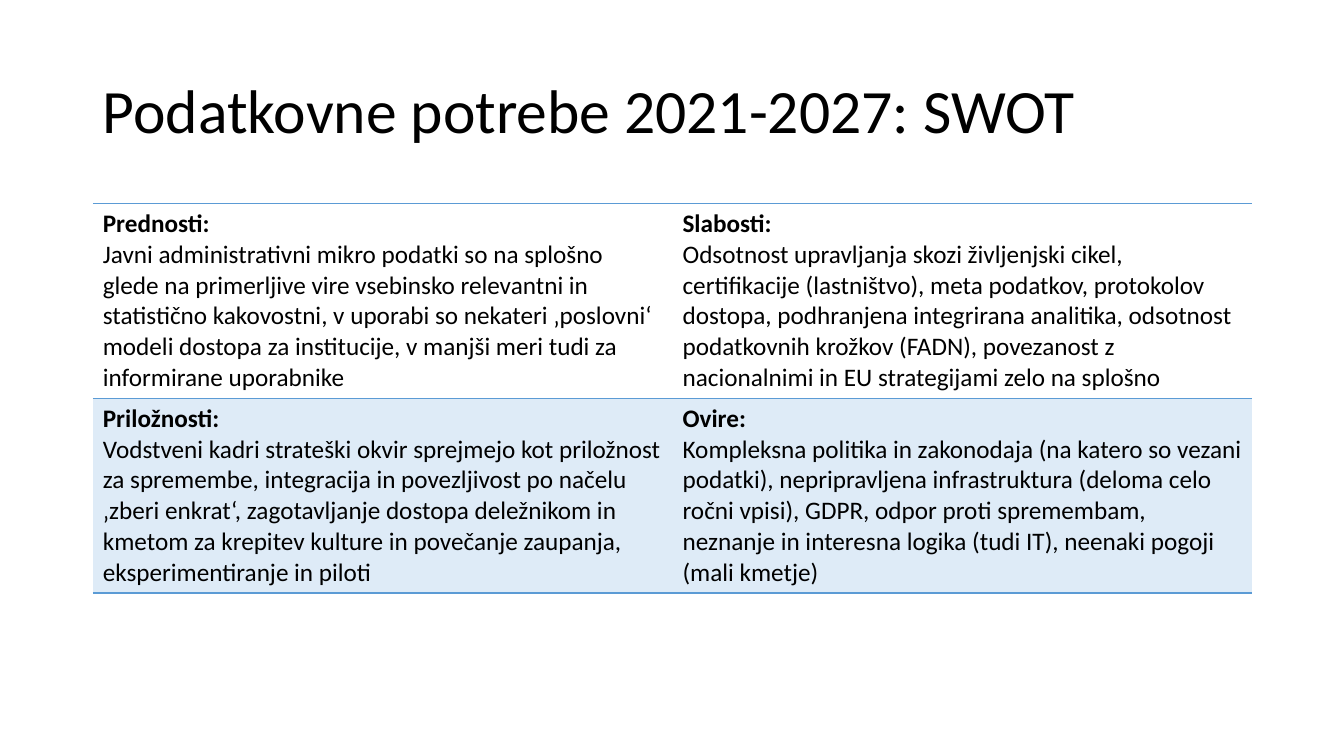
import pptx
import pptx.util
import pptx.dml.color
import pptx.enum.text
import pptx.oxml
import pptx.oxml.ns
from dataclasses import dataclass
from lxml import etree

Inches = pptx.util.Inches
Align = pptx.enum.text.PP_ALIGN
Anchor = pptx.enum.text.MSO_ANCHOR


@dataclass(frozen=True)
class Theme:
    font: str = "Calibri"
    ink: str = "000000"
    line: str = "5B9BD5"
    band: str = "DEEBF7"
    title: int = 44
    body: int = 18
    rule: int = 1


THEME = Theme()
PLAIN = "{2D5ABB26-0587-4C30-8999-92F81FD0307C}"  # table style without grid
LEFT, WIDTH = 0.92, 11.5
TITLE = "Podatkovne potrebe 2021-2027: SWOT"
SWOT = [
    [
        ("Prednosti:",
         "Javni administrativni mikro podatki so na splošno glede na primerljive "
         "vire vsebinsko relevantni in statistično kakovostni, v uporabi so nekateri "
         "‚poslovni‘ modeli dostopa za institucije, v manjši meri tudi za "
         "informirane uporabnike"),
        ("Slabosti:",
         "Odsotnost upravljanja skozi življenjski cikel, certifikacije (lastništvo), "
         "meta podatkov, protokolov dostopa, podhranjena integrirana analitika, "
         "odsotnost podatkovnih krožkov (FADN), povezanost z nacionalnimi in EU "
         "strategijami zelo na splošno"),
    ],
    [
        ("Priložnosti:",
         "Vodstveni kadri strateški okvir sprejmejo kot priložnost za spremembe, "
         "integracija in povezljivost po načelu ‚zberi enkrat‘, zagotavljanje "
         "dostopa deležnikom in kmetom za krepitev kulture in povečanje zaupanja, "
         "eksperimentiranje in piloti"),
        ("Ovire:",
         "Kompleksna politika in zakonodaja (na katero so vezani podatki), "
         "nepripravljena infrastruktura (deloma celo ročni vpisi), GDPR, odpor proti "
         "spremembam, neznanje in interesna logika (tudi IT), neenaki pogoji "
         "(mali kmetje)"),
    ],
]


def add_run(para, text, size, bold=False):
    run = para.add_run()
    run.text = text
    font = run.font
    font.name, font.size, font.bold = THEME.font, pptx.util.Pt(size), bold
    font.color.rgb = pptx.dml.color.RGBColor.from_string(THEME.ink)


def add_title(slide, text):
    title = slide.shapes.title
    title.left, title.top = Inches(LEFT), Inches(0.4)
    title.width, title.height = Inches(WIDTH), Inches(1.45)
    frame = title.text_frame
    frame.word_wrap = True
    frame.auto_size = pptx.enum.text.MSO_AUTO_SIZE.NONE
    frame.vertical_anchor = Anchor.MIDDLE
    para = frame.paragraphs[0]
    para.alignment = Align.LEFT
    para.line_spacing = 0.9
    add_run(para, text, THEME.title)


def add_rule(cell, side):
    """Draw a line along one side of a cell."""
    qn = pptx.oxml.ns.qn
    props = cell._tc.get_or_add_tcPr()
    line = etree.SubElement(props, qn(f"a:{side}"), w=str(pptx.util.Pt(THEME.rule)))
    fill = etree.SubElement(line, qn("a:solidFill"))
    etree.SubElement(fill, qn("a:srgbClr"), val=THEME.line)


def fill_cell(cell, head, body, row):
    # Lines come before the fill in the cell properties
    for side in ("lnT", "lnB"):
        add_rule(cell, side)
    if row % 2:
        cell.fill.solid()
        cell.fill.fore_color.rgb = pptx.dml.color.RGBColor.from_string(THEME.band)
    else:
        cell.fill.background()
    frame = cell.text_frame
    add_run(frame.paragraphs[0], head, THEME.body, bold=True)
    add_run(frame.add_paragraph(), body, THEME.body)


def add_grid(slide, rows):
    count, cols = len(rows), len(rows[0])
    height = 1.93
    frame = slide.shapes.add_table(count, cols, Inches(LEFT), Inches(2.02),
                                   Inches(WIDTH), Inches(height * count))
    table = frame.table
    table.first_row = table.horz_banding = False
    table._tbl.tblPr.find(pptx.oxml.ns.qn("a:tableStyleId")).text = PLAIN
    for r, row in enumerate(rows):
        for c, (head, body) in enumerate(row):
            fill_cell(table.cell(r, c), head, body, r)


def main():
    deck = pptx.Presentation()
    deck.slide_width, deck.slide_height = Inches(13.33), Inches(7.5)
    slide = deck.slides.add_slide(deck.slide_layouts[5])
    add_title(slide, TITLE)
    add_grid(slide, SWOT)
    deck.save("out.pptx")


if __name__ == "__main__":
    main()
